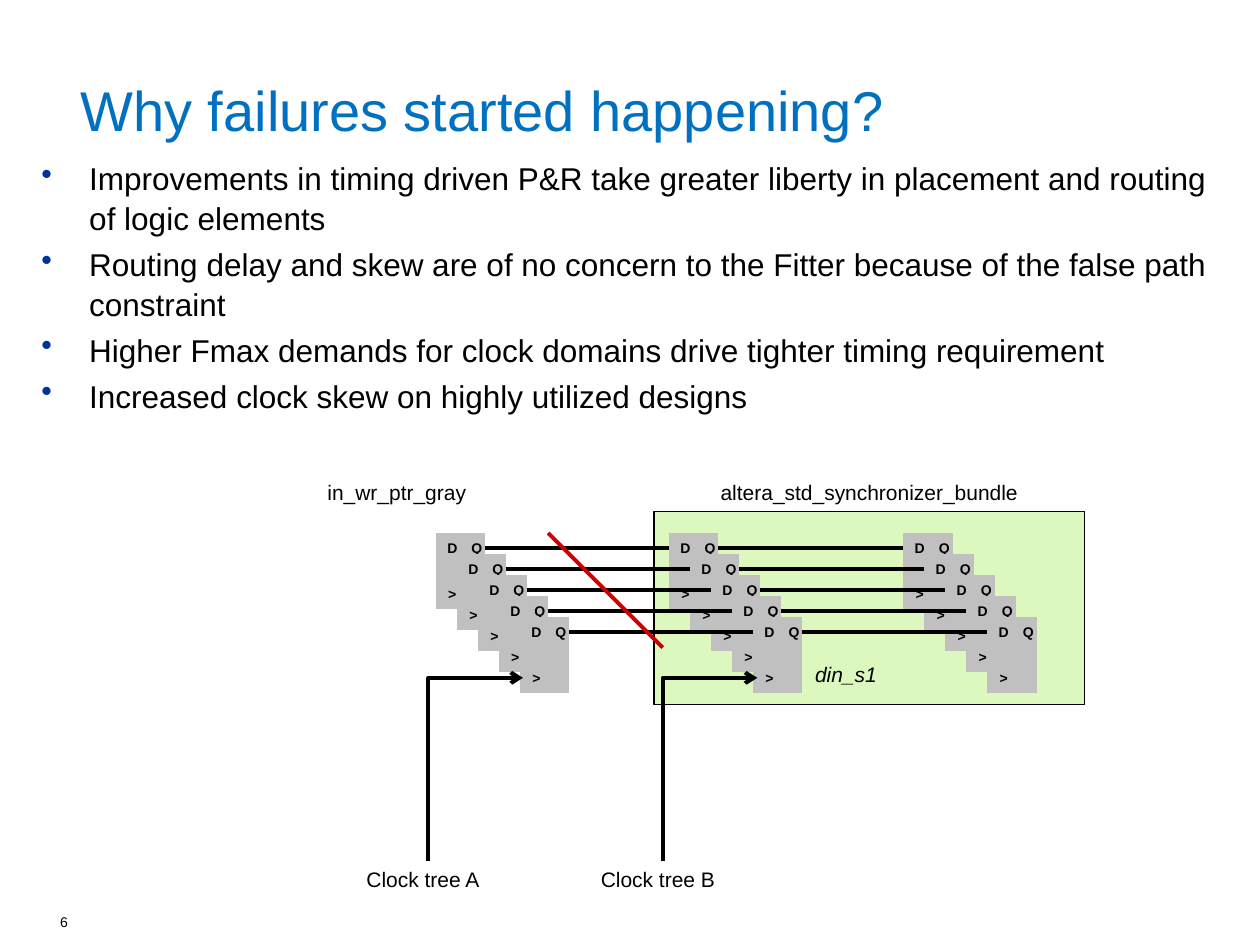
from dataclasses import dataclass

from lxml.etree import SubElement
from pptx import Presentation
from pptx.dml.color import RGBColor
from pptx.enum.shapes import MSO_CONNECTOR, MSO_SHAPE
from pptx.enum.text import MSO_ANCHOR, PP_ALIGN
from pptx.oxml.ns import qn
from pptx.util import Inches, Pt

BLACK = RGBColor(0x00, 0x00, 0x00)
BLUE = RGBColor(0x00, 0x70, 0xC0)
GRAY = RGBColor(0xC0, 0xC0, 0xC0)
GREEN = RGBColor(0xDC, 0xF8, 0xBF)
RED = RGBColor(0xCC, 0x00, 0x00)
BULLET_HEX = "003399"
FONT = "Arial"

BITS = 5
STEP = 1 / 6  # diagonal offset between neighbouring bits
FLOP_WIDTH, FLOP_HEIGHT = 0.39, 0.6
PIN_WIDTH, PIN_HEIGHT = 0.19, 0.24
STAGE_TOP = 4.23
STAGE_A, STAGE_B, STAGE_C = 3.46, 5.31, 7.17

BULLETS = [
    "Improvements in timing driven P&R take greater liberty in placement and routing of logic elements",
    "Routing delay and skew are of no concern to the Fitter because of the false path constraint",
    "Higher Fmax demands for clock domains drive tighter timing requirement",
    "Increased clock skew on highly utilized designs",
]


@dataclass
class Label:
    text: str
    left: float
    top: float
    width: float
    height: float
    size: float = 12
    color: RGBColor = BLACK
    bold: bool = False
    italic: bool = False
    align: PP_ALIGN = PP_ALIGN.LEFT
    anchor: MSO_ANCHOR = MSO_ANCHOR.TOP


@dataclass
class Pin:
    text: str
    dx: float
    dy: float


PINS = [Pin("D", 0, 0), Pin("Q", 0.195, 0), Pin(">", 0, 0.37)]

LABELS = [
    Label("Why failures started happening?", 0.54, 0.44, 9.18, 0.85,
          size=32, color=BLUE, anchor=MSO_ANCHOR.MIDDLE),
    Label("6", 0.38, 7.2, 0.76, 0.31, size=8),
    Label("in_wr_ptr_gray", 2.5, 3.76, 1.74, 0.3),
    Label("altera_std_synchronizer_bundle", 5.19, 3.76, 3.42, 0.3, align=PP_ALIGN.CENTER),
    Label("din_s1", 6.37, 5.2, 0.69, 0.3, italic=True),
    Label("Clock tree A", 2.81, 6.83, 1.17, 0.3),
    Label("Clock tree B", 4.67, 6.83, 1.17, 0.3),
]


def add_label(shapes, label: Label):
    box = shapes.add_textbox(Inches(label.left), Inches(label.top),
                             Inches(label.width), Inches(label.height))
    frame = box.text_frame
    frame.word_wrap = True
    frame.vertical_anchor = label.anchor
    frame.text = label.text
    para = frame.paragraphs[0]
    para.alignment = label.align
    font = para.runs[0].font
    font.name, font.size, font.color.rgb = FONT, Pt(label.size), label.color
    font.bold, font.italic = label.bold, label.italic
    return box


def add_bullets(shapes, items: list[str]) -> None:
    box = shapes.add_textbox(Inches(0.23), Inches(1.2), Inches(9.49), Inches(5.08))
    frame = box.text_frame
    frame.word_wrap = True
    for index, item in enumerate(items):
        para = frame.paragraphs[0] if index == 0 else frame.add_paragraph()
        para.text = item
        para.line_spacing = 1.05
        if index:
            para.space_before = Pt(3.6)
        properties = para._p.get_or_add_pPr()
        properties.set("marL", str(Inches(0.38)))
        properties.set("indent", str(Inches(-0.38)))
        color = SubElement(properties, qn("a:buClr"))
        SubElement(color, qn("a:srgbClr"), val=BULLET_HEX)
        SubElement(properties, qn("a:buChar"), char="•")
        font = para.runs[0].font
        font.name, font.size, font.color.rgb = FONT, Pt(18), BLACK


def add_block(shapes, kind: MSO_SHAPE, left: float, top: float,
              width: float, height: float, fill: RGBColor):
    block = shapes.add_shape(kind, Inches(left), Inches(top), Inches(width), Inches(height))
    block.shadow.inherit = False
    block.fill.solid()
    block.fill.fore_color.rgb = fill
    block.line.fill.background()
    return block


def add_line(shapes, x1: float, y1: float, x2: float, y2: float,
             color: RGBColor = BLACK, kind: MSO_CONNECTOR = MSO_CONNECTOR.STRAIGHT):
    line = shapes.add_connector(kind, Inches(x1), Inches(y1), Inches(x2), Inches(y2))
    line.line.color.rgb = color
    line.line.width = Pt(2.25)
    SubElement(line._element.spPr, qn("a:effectLst"))
    return line


def add_stage(shapes, left: float) -> None:
    """Draw one register stage: a diagonal stack of flip-flops."""
    for bit in range(BITS):
        x, y = left + bit * STEP, STAGE_TOP + bit * STEP
        flop = shapes.add_group_shape().shapes
        add_block(flop, MSO_SHAPE.FLOWCHART_PROCESS, x, y, FLOP_WIDTH, FLOP_HEIGHT, GRAY)
        for pin in PINS:
            box = add_label(flop, Label(pin.text, x + pin.dx, y + pin.dy, PIN_WIDTH, PIN_HEIGHT,
                                        size=8, bold=True, align=PP_ALIGN.CENTER))
            box.text_frame.margin_left = Inches(0.07)
            box.text_frame.margin_right = 0


def add_data_lines(shapes, source: float, target: float) -> None:
    for bit in range(BITS):
        offset = bit * STEP
        y = STAGE_TOP + 0.12 + offset
        add_line(shapes, source + FLOP_WIDTH + offset, y, target + offset, y)


def add_clock(shapes, x: float) -> None:
    """Draw a clock route going up from x, then right into the last flip-flop."""
    bottom, top, reach = 6.83, 5.38, 0.75
    rise = bottom - top
    center_x, center_y = x + reach / 2, (top + bottom) / 2
    # The elbow is laid out sideways, then turned a quarter
    route = add_line(shapes, center_x + rise / 2, center_y + reach / 2,
                     center_x - rise / 2, center_y - reach / 2, kind=MSO_CONNECTOR.ELBOW)
    properties = route._element.spPr
    properties.find(qn("a:xfrm")).set("rot", str(90 * 60000))
    properties.find(qn("a:prstGeom")).set("prst", "bentConnector2")
    SubElement(properties.find(qn("a:ln")), qn("a:tailEnd"), type="arrow")


def main() -> None:
    deck = Presentation()
    deck.slide_width, deck.slide_height = Inches(10), Inches(7.5)
    page = deck.slides.add_slide(deck.slide_layouts[6])
    shapes = page.shapes

    # Synchronizer frame
    frame = add_block(shapes, MSO_SHAPE.RECTANGLE, 5.19, 4.06, 3.42, 1.53, GREEN)
    frame.line.color.rgb = BLACK
    frame.line.width = Pt(0.75)

    # Title, page number, captions and bullets
    for label in LABELS:
        add_label(shapes, label)
    add_bullets(shapes, BULLETS)

    # Register stages, data lines and the cut path
    add_stage(shapes, STAGE_B)
    add_data_lines(shapes, STAGE_A, STAGE_B)
    add_line(shapes, 4.35, 4.23, 5.26, 5.14, RED)
    add_stage(shapes, STAGE_C)
    add_data_lines(shapes, STAGE_B, STAGE_C)
    add_stage(shapes, STAGE_A)

    # Clock trees
    for x in (3.4, 5.26):
        add_clock(shapes, x)

    deck.save("out.pptx")


if __name__ == "__main__":
    main()
